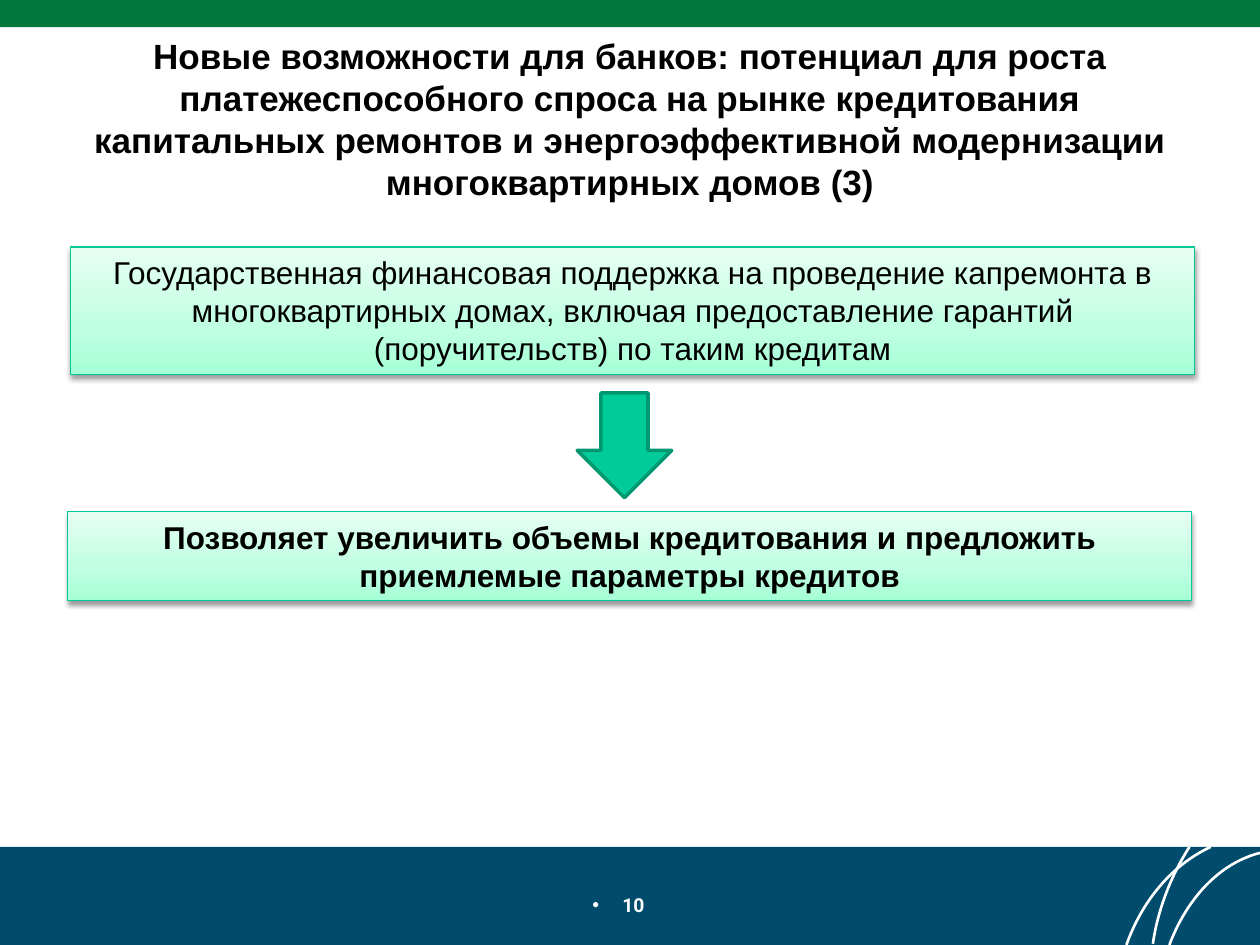
"""Builds a slide on state support and lending growth for apartment building repairs."""
from dataclasses import dataclass

from lxml import etree
from pptx import Presentation
from pptx.dml.color import RGBColor
from pptx.enum.shapes import MSO_SHAPE
from pptx.enum.text import MSO_ANCHOR, MSO_AUTO_SIZE, PP_ALIGN
from pptx.oxml.ns import qn
from pptx.util import Pt

RECTANGLE, DOWN_ARROW = MSO_SHAPE.RECTANGLE, MSO_SHAPE.DOWN_ARROW
CENTER, TOP, MIDDLE = PP_ALIGN.CENTER, MSO_ANCHOR.TOP, MSO_ANCHOR.MIDDLE
NO_FIT, GROW = MSO_AUTO_SIZE.NONE, MSO_AUTO_SIZE.SHAPE_TO_FIT_TEXT


@dataclass(frozen=True)
class Theme:
    font: str = "Arial"
    number_font: str = "Roboto"
    title_size: float = 20
    body_size: float = 18
    number_size: float = 11
    black: str = "000000"
    white: str = "FFFFFF"
    navy: str = "014C6D"
    green: str = "00783C"
    mint_line: str = "00C896"
    arrow: str = "00CC99"
    arrow_line: str = "009771"
    mint: tuple = ((0, "A5FFD6"), (35, "BFFFE2"), (100, "E7FFF3"))


THEME = Theme()
WIDTH, HEIGHT = 720, 540
FOOTER_TOP = 484

TITLE = ("Новые возможности для банков: потенциал для роста платежеспособного спроса "
         "на рынке кредитования капитальных ремонтов и энергоэффективной модернизации "
         "многоквартирных домов (3)")
STATEMENTS = [
    ("Государственная финансовая поддержка на проведение капремонта в многоквартирных "
     "домах, включая предоставление гарантий (поручительств) по таким кредитам",
     False, (40.3, 141.2, 642.5, 72.7)),
    ("Позволяет увеличить объемы кредитования и предложить приемлемые параметры кредитов",
     True, (38.6, 292.3, 642.5, 51)),
]
PAGE_NUMBER = "10"
BANDS = [((0, FOOTER_TOP, WIDTH, HEIGHT - FOOTER_TOP), THEME.navy),
         ((0, 0, WIDTH, 15.6), THEME.green)]
ARCS = [
    ((691.9, 484), (670.3, 494), (653, 514), (643.7, 540)),
    ((720, 487.4), (697, 493.2), (678.2, 513.4), (668.2, 540)),
    ((679.7, 484), (669.6, 499.7), (661.7, 519.1), (658.8, 539.3)),
]


def place(shape, frame):
    shape.left, shape.top, shape.width, shape.height = map(Pt, frame)


def write(shape, text, size, color, bold, font, anchor, fit):
    frame = shape.text_frame
    frame.word_wrap = True
    frame.auto_size = fit
    frame.vertical_anchor = anchor
    para = frame.paragraphs[0]
    para.text = text
    para.alignment = CENTER
    para.font.size = Pt(size)
    para.font.bold = bold
    para.font.name = font
    para.font.color.rgb = RGBColor.from_string(color)


def add_block(page, kind, frame, fill, line=None, line_width=0):
    block = page.shapes.add_shape(kind, *map(Pt, frame))
    block.shadow.inherit = False
    block.fill.solid()
    block.fill.fore_color.rgb = RGBColor.from_string(fill)
    if line:
        block.line.color.rgb = RGBColor.from_string(line)
        block.line.width = Pt(line_width)
    else:
        block.line.fill.background()
    return block


def add_color(parent, color):
    return etree.SubElement(parent, qn("a:srgbClr"), val=color)


def add_gradient(shape, stops):
    solid = shape.element.spPr.find(qn("a:solidFill"))
    gradient = etree.Element(qn("a:gradFill"), rotWithShape="1")
    stop_list = etree.SubElement(gradient, qn("a:gsLst"))
    for percent, color in stops:
        add_color(etree.SubElement(stop_list, qn("a:gs"), pos=str(percent * 1000)), color)
    etree.SubElement(gradient, qn("a:lin"), ang="16200000", scaled="1")
    solid.getparent().replace(solid, gradient)


def add_shadow(shape):
    effects = shape.element.spPr.find(qn("a:effectLst"))
    shadow = etree.SubElement(effects, qn("a:outerShdw"), blurRad=str(Pt(3.1)),
                              dist=str(Pt(1.6)), dir="5400000", rotWithShape="0")
    etree.SubElement(add_color(shadow, THEME.black), qn("a:alpha"), val="38000")


def add_arc(page, controls, steps=24):
    points = []
    for step in range(steps + 1):
        t = step / steps
        weights = ((1 - t) ** 3, 3 * t * (1 - t) ** 2, 3 * t * t * (1 - t), t ** 3)
        points.append(tuple(Pt(sum(w * c for w, c in zip(weights, axis)))
                            for axis in zip(*controls)))
    builder = page.shapes.build_freeform(*points[0])
    builder.add_line_segments(points[1:], close=False)
    arc = builder.convert_to_shape()
    arc.shadow.inherit = False
    arc.fill.background()
    arc.line.color.rgb = RGBColor.from_string(THEME.white)
    arc.line.width = Pt(1.5)


def add_bullet(para, margin, indent):
    properties = para._p.get_or_add_pPr()
    properties.set("marL", str(Pt(margin)))
    properties.set("indent", str(Pt(indent)))
    etree.SubElement(properties, qn("a:buFont"), typeface=THEME.font)
    etree.SubElement(properties, qn("a:buChar"), char="•")


def main():
    deck = Presentation()
    deck.slide_width, deck.slide_height = Pt(WIDTH), Pt(HEIGHT)
    page = deck.slides.add_slide(deck.slide_layouts[5])

    for frame, color in BANDS:
        add_block(page, RECTANGLE, frame, color)
    for controls in ARCS:
        add_arc(page, controls)

    title = page.shapes.title
    place(title, (36, 31.7, 648, 72))
    write(title, TITLE, THEME.title_size, THEME.black, True, THEME.font, MIDDLE, NO_FIT)

    for text, bold, frame in STATEMENTS:
        box = add_block(page, RECTANGLE, frame, THEME.mint[0][1], THEME.mint_line, 0.75)
        add_gradient(box, THEME.mint)
        add_shadow(box)
        write(box, text, THEME.body_size, THEME.black, bold, THEME.font, TOP, GROW)

    add_block(page, DOWN_ARROW, (329.8, 224.6, 54, 59.8), THEME.arrow, THEME.arrow_line, 2)

    number = page.shapes.add_textbox(*map(Pt, (285.8, 506.9, 148.3, 22.3)))
    add_bullet(number.text_frame.paragraphs[0], 4, -17)
    write(number, PAGE_NUMBER, THEME.number_size, THEME.white, True,
          THEME.number_font, TOP, NO_FIT)

    deck.save("out.pptx")


if __name__ == "__main__":
    main()
